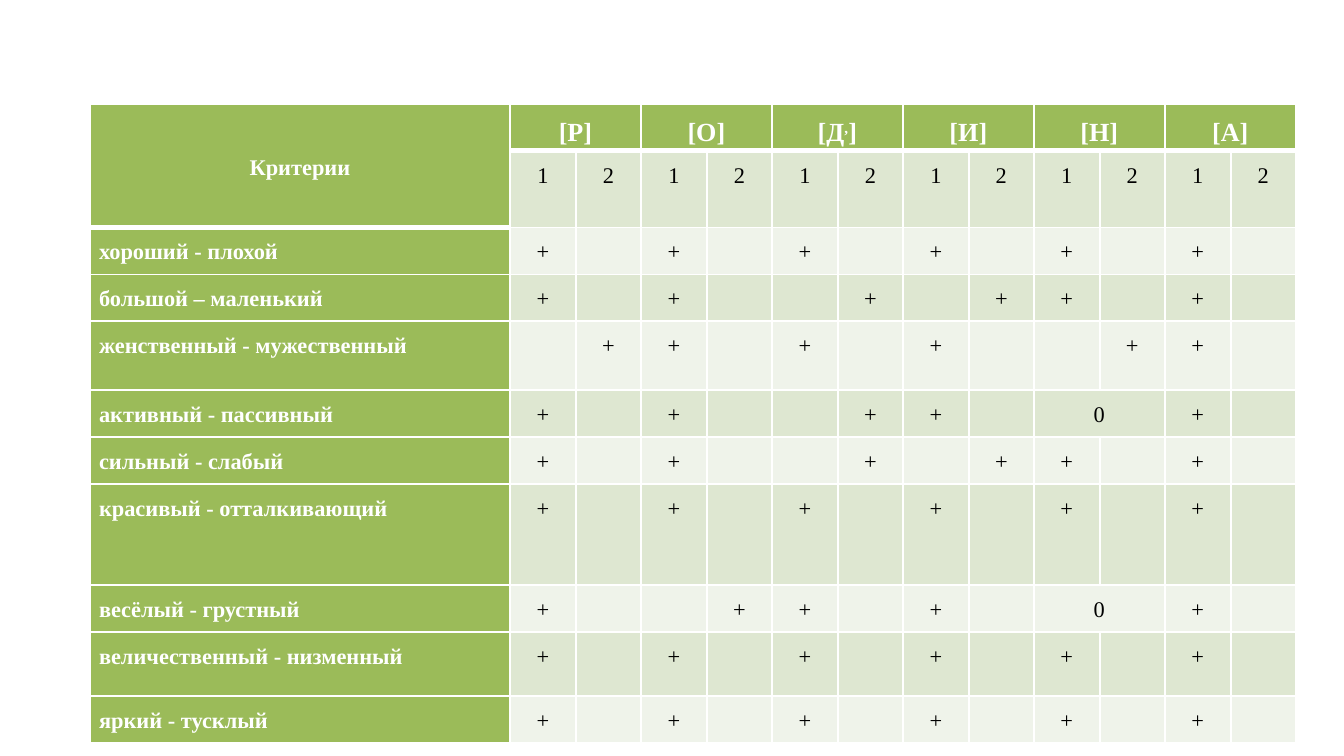
import lxml.etree
import pptx
import pptx.dml.color
import pptx.enum.text
import pptx.oxml.ns
import pptx.util

PX = 914400 / 134.4
INK = {"head": "9BBB59", "dark": "DEE7D1", "light": "EFF3EA",
       "white": "FFFFFF", "black": "000000"}
FONT = "Times New Roman"
STYLE = "{F5AB1C69-6EDB-4FF4-983F-18BD219EF322}"
ALIGN = pptx.enum.text.PP_ALIGN
SOUNDS = ["Р", "О", "Д,", "И", "Н", "А"]
HEAD = [47, 74]
TRAITS = [
    ("хороший - плохой", "111111", 47),
    ("большой – маленький", "112211", 47),
    ("женственный - мужественный", "211121", 69),
    ("активный - пассивный", "112101", 47),
    ("сильный - слабый", "112211", 47),
    ("красивый - отталкивающий", "111111", 101),
    ("весёлый - грустный", "121101", 47),
    ("величественный - низменный", "111111", 64),
    ("яркий - тусклый", "111111", 47),
]


def px(num):
    return pptx.util.Emu(round(num * PX))


def color(name):
    return pptx.dml.color.RGBColor.from_string(INK[name])


def border(cell, side, width):
    props = cell._tc.get_or_add_tcPr()
    tag = pptx.oxml.ns.qn
    line = lxml.etree.SubElement(props, tag("a:" + side), w=str(pptx.util.Pt(width)))
    fill = lxml.etree.SubElement(line, tag("a:solidFill"))
    lxml.etree.SubElement(fill, tag("a:srgbClr"), val=INK["white"])


def paint(cell, fill, base=1):
    for side, width in (("lnL", 1), ("lnR", 1), ("lnT", 1), ("lnB", base)):
        border(cell, side, width)
    cell.fill.solid()
    cell.fill.fore_color.rgb = color(fill)
    cell.margin_left = cell.margin_right = px(9)
    cell.margin_top = cell.margin_bottom = 0


def write(cell, parts, size=12, ink="black", bold=False, align=ALIGN.CENTER):
    para = cell.text_frame.paragraphs[0]
    para.alignment = align
    para.line_spacing = 1.5
    font = para.font
    font.name, font.size, font.bold = FONT, pptx.util.Pt(size), bold
    font.color.rgb = color(ink)
    for part in parts:
        run = para.add_run()
        run.text = part
        if part == ",":
            run._r.get_or_add_rPr().set("baseline", "30000")


def header(table):
    title = table.cell(0, 0)
    for row in range(2):
        paint(table.cell(row, 0), "head", 3)
    title.merge(table.cell(1, 0))
    title.margin_top = px(39)
    write(title, ["Критерии"], ink="white", bold=True)
    for num, sound in enumerate(SOUNDS):
        col = 1 + 2 * num
        for step in range(2):
            paint(table.cell(0, col + step), "head", 3)
            paint(table.cell(1, col + step), "dark")
            write(table.cell(1, col + step), [str(step + 1)])
        top = table.cell(0, col)
        top.merge(table.cell(0, col + 1))
        parts = ["[Д", ",", "]"] if "," in sound else [f"[{sound}]"]
        write(top, parts, 14, "white", True)


def body(table):
    for row, (trait, marks, _) in enumerate(TRAITS, len(HEAD)):
        for col in range(1 + 2 * len(SOUNDS)):
            fill = "dark" if row % 2 else "light"
            paint(table.cell(row, col), fill if col else "head")
        write(table.cell(row, 0), [trait], ink="white", bold=True, align=ALIGN.JUSTIFY)
        for num, mark in enumerate(marks):
            col = 1 + 2 * num
            if mark == "0":
                table.cell(row, col).merge(table.cell(row, col + 1))
                write(table.cell(row, col), ["0"])
            else:
                write(table.cell(row, col + int(mark) - 1), ["+"])


def grid(slide, left, top, width):
    highs = HEAD + [trait[2] for trait in TRAITS]
    count = 2 * len(SOUNDS)
    frame = slide.shapes.add_table(len(highs), count + 1, px(left), px(top),
                                   px(width), px(sum(highs)))
    table = frame.table
    table.first_col = True
    table._tbl.tblPr.find(pptx.oxml.ns.qn("a:tableStyleId")).text = STYLE
    wides = [66 - num % 2 for num in range(count)]
    for col, wide in zip(table.columns, [width - sum(wides)] + wides):
        col.width = px(wide)
    for row, high in zip(table.rows, highs):
        row.height = px(high)
    header(table)
    body(table)


def main():
    deck = pptx.Presentation()
    deck.slide_width, deck.slide_height = px(1344), px(756)
    slide = deck.slides.add_slide(deck.slide_layouts[6])
    grid(slide, 90, 104, 1206)
    deck.save("out.pptx")


if __name__ == "__main__":
    main()
